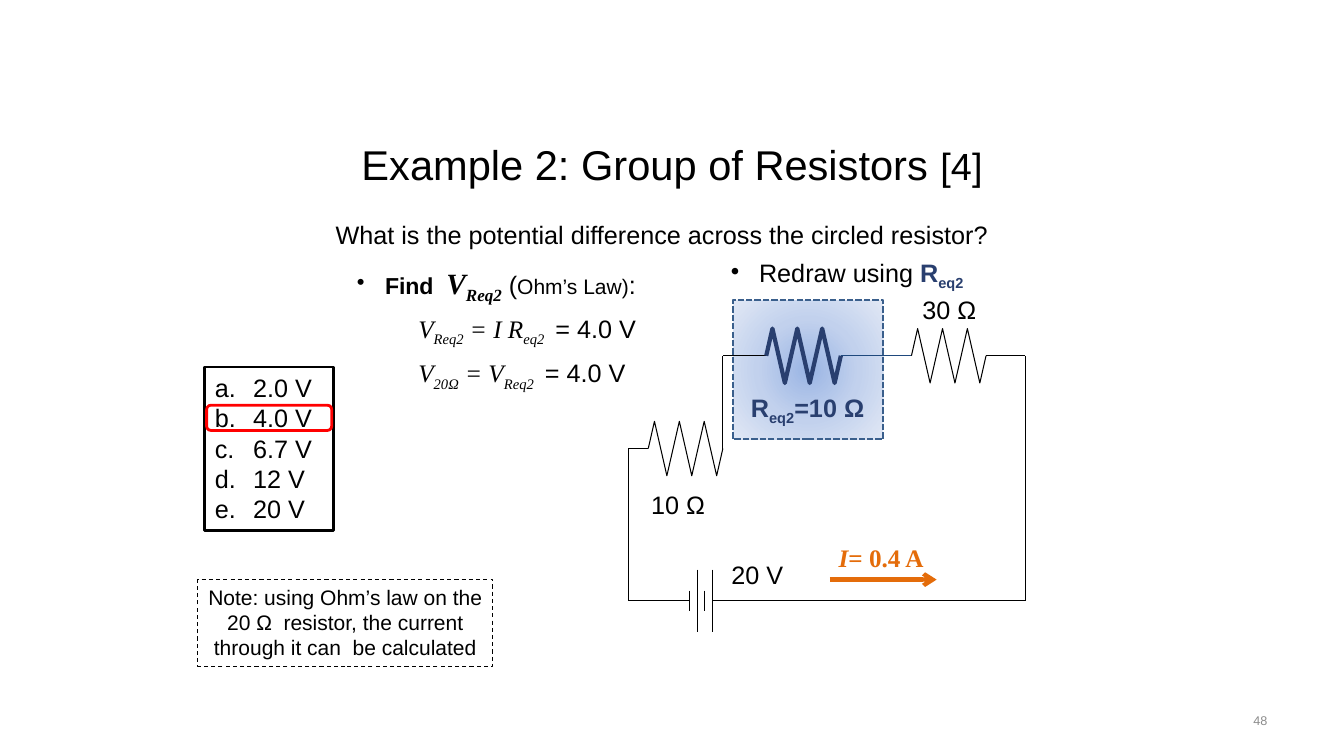
from lxml import etree
from pptx import Presentation
from pptx.dml.color import RGBColor
from pptx.enum.dml import MSO_LINE
from pptx.enum.shapes import MSO_CONNECTOR, MSO_SHAPE
from pptx.enum.text import MSO_ANCHOR, MSO_AUTO_SIZE, PP_ALIGN
from pptx.oxml import parse_xml
from pptx.oxml.ns import nsdecls, qn
from pptx.util import Inches, Pt

LEFT, CENTER, RIGHT = PP_ALIGN.LEFT, PP_ALIGN.CENTER, PP_ALIGN.RIGHT
TOP, MIDDLE = MSO_ANCHOR.TOP, MSO_ANCHOR.MIDDLE
RECTANGLE, ROUNDED = MSO_SHAPE.RECTANGLE, MSO_SHAPE.ROUNDED_RECTANGLE
STRAIGHT = MSO_CONNECTOR.STRAIGHT
DASH, SQUARE_DOT = MSO_LINE.DASH, MSO_LINE.SQUARE_DOT
NO_AUTOFIT = MSO_AUTO_SIZE.NONE

BLACK = RGBColor(0x00, 0x00, 0x00)
WHITE = RGBColor(0xFF, 0xFF, 0xFF)
RED = RGBColor(0xFF, 0x00, 0x00)
ORANGE = RGBColor(0xE4, 0x6C, 0x0A)
NAVY = RGBColor(0x29, 0x3F, 0x6F)
BORDER_BLUE = RGBColor(0x3A, 0x5F, 0x8C)
WIRE_BLUE = RGBColor(0x1F, 0x49, 0x7D)
GRAY = RGBColor(0x8C, 0x8C, 0x8C)
GLOW = [(0, RGBColor(0x9A, 0xB5, 0xE4)), (50, RGBColor(0xC2, 0xD1, 0xED)),
        (100, RGBColor(0xE1, 0xE8, 0xF5))]
SANS, SERIF = "Arial", "Times New Roman"

# Content: a run is its text and the styles that differ from its paragraph
ITALIC, BOLD, SUB = {"italic": True}, {"bold": True}, {"sub": True}
UPRIGHT = {"name": SANS}
ITALIC_SUB = ITALIC | SUB
SYMBOL = {"name": SERIF, "size": Pt(21)} | BOLD | ITALIC
NAVY_BOLD = {"color": NAVY} | BOLD

TITLE = [("Example 2: Group of Resistors ", {}), ("[4]", {"size": Pt(27)})]
ANSWERS = ["2.0 V", "4.0 V", "6.7 V", "12 V", "20 V"]
QUESTION = [("What is the potential difference across the circled resistor?", {})]
FIND = [("Find  ", BOLD | {"size": Pt(16.5)}), ("V", SYMBOL), ("Req2", SYMBOL | SUB),
        (" (", {}), ("Ohm’s Law)", {"size": Pt(15)}), (":", {})]
EQUATIONS = [
    [("V", ITALIC), ("Req2", ITALIC_SUB), (" = I R", ITALIC),
     ("eq2   ", ITALIC_SUB), ("= 4.0 V", UPRIGHT)],
    [("V", ITALIC), ("20Ω", ITALIC_SUB), (" = V", ITALIC),
     ("Req2   ", ITALIC_SUB), ("= 4.0 V", UPRIGHT)],
]
REDRAW = [("Redraw using ", {}), ("R", NAVY_BOLD), ("eq2", NAVY_BOLD | SUB)]
EQUIVALENT = [("R", BOLD), ("eq2", BOLD | SUB), ("=10 Ω", BOLD)]
CURRENT = [("I", BOLD | ITALIC), ("= 0.4 A", BOLD)]
NOTE = [("Note: using Ohm’s law on the 20 Ω  resistor, the current through it "
         "can  be calculated", {})]
PART_LABELS = [("30 Ω ", 8.98, 2.87), ("10 Ω ", 6.29, 4.81), ("20 V", 7.04, 5.5)]

# Circuit grid: columns and rows that the wires follow
X_LEFT, X_INNER, X_RIGHT = 6.23, 7.17, 10.17
Y_TOP, Y_MIDDLE, Y_BOTTOM = 3.53, 4.45, 5.96
ZIGZAG_WIDTH, ZIGZAG_RISE, ZIGZAG_TURNS = 0.74, 0.27, 6
X_TEN, X_EQUIVALENT, X_THIRTY = 6.43, 7.6, 9.04
RESISTORS = [(X_TEN, Y_MIDDLE, BLACK, 0.75), (X_EQUIVALENT, Y_TOP, NAVY, 3),
             (X_THIRTY, Y_TOP, BLACK, 0.75)]
PLATES = [(6.84, 0.1), (6.92, 0.31), (6.99, 0.1), (7.07, 0.31)]
WIRES = [
    (X_LEFT, Y_BOTTOM, PLATES[0][0], Y_BOTTOM, BLACK),
    (X_LEFT, Y_MIDDLE, X_LEFT, Y_BOTTOM, BLACK),
    (X_LEFT, Y_MIDDLE, X_TEN, Y_MIDDLE, BLACK),
    (X_INNER, Y_MIDDLE, X_INNER, Y_TOP, BLACK),
    (X_INNER, Y_TOP, X_EQUIVALENT, Y_TOP, BLACK),
    (X_EQUIVALENT + ZIGZAG_WIDTH, Y_TOP, X_THIRTY, Y_TOP, WIRE_BLUE),
    (X_THIRTY + ZIGZAG_WIDTH, Y_TOP, X_RIGHT, Y_TOP, BLACK),
    (X_RIGHT, Y_TOP, X_RIGHT, Y_BOTTOM, BLACK),
    (PLATES[-1][0], Y_BOTTOM, X_RIGHT, Y_BOTTOM, BLACK),
]
WIRES += [(x, Y_BOTTOM - half, x, Y_BOTTOM + half, BLACK) for x, half in PLATES]

presentation = Presentation()
presentation.slide_width, presentation.slide_height = Inches(13.33), Inches(7.5)
slide = presentation.slides.add_slide(presentation.slide_layouts[1])
shapes = slide.shapes


def place(shape, left, top, width, height):
    shape.left, shape.top = Inches(left), Inches(top)
    shape.width, shape.height = Inches(width), Inches(height)


def outline(shape, color, width, dash=None):
    shape.line.color.rgb = color
    shape.line.width = Pt(width)
    if dash is not None:
        shape.line.dash_style = dash


def style_font(font, color=None, **settings):
    if color is not None:
        font.color.rgb = color
    for name, value in settings.items():
        setattr(font, name, value)


def write(paragraph, runs, size=18, color=BLACK, align=LEFT, font=SANS):
    paragraph.alignment = align
    style_font(paragraph.font, color, name=font, size=Pt(size))
    for text, style in runs:
        run = paragraph.add_run()
        run.text = text
        settings = dict(style)
        if settings.pop("sub", False):
            run._r.get_or_add_rPr().set("baseline", "-25000")
        style_font(run.font, **settings)


def set_bullet(paragraph, indent, tag, **attributes):
    properties = paragraph._p.get_or_add_pPr()
    properties.set("marL", str(Inches(indent)))
    properties.set("indent", str(-Inches(indent)))
    bullet = etree.Element(qn(tag), attributes)
    properties.insert_element_before(bullet, "a:tabLst", "a:defRPr", "a:extLst")


def prepare_frame(shape, anchor=TOP):
    frame = shape.text_frame
    frame.word_wrap, frame.auto_size = True, NO_AUTOFIT
    frame.vertical_anchor = anchor
    return frame.paragraphs[0]


def add_text(runs, left, top, width, height=0.4, anchor=TOP, **style):
    box = shapes.add_textbox(Inches(left), Inches(top), Inches(width), Inches(height))
    paragraph = prepare_frame(box, anchor)
    write(paragraph, runs, **style)
    return paragraph


def add_box(kind, left, top, width, height):
    box = shapes.add_shape(kind, Inches(left), Inches(top), Inches(width), Inches(height))
    box.shadow.inherit = False
    box.fill.background()
    return box


def add_wire(x1, y1, x2, y2, color, width=0.75):
    wire = shapes.add_connector(STRAIGHT, Inches(x1), Inches(y1), Inches(x2), Inches(y2))
    outline(wire, color, width)
    etree.SubElement(wire._element.spPr, qn("a:effectLst"))
    return wire


def add_resistor(left, middle, color, width):
    points = [(left + ZIGZAG_WIDTH * (2 * turn + 1) / (2 * ZIGZAG_TURNS),
               middle + ZIGZAG_RISE * (1 if turn % 2 else -1))
              for turn in range(ZIGZAG_TURNS)]
    points.append((left + ZIGZAG_WIDTH, middle))
    builder = shapes.build_freeform(Inches(left), Inches(middle))
    builder.add_line_segments([(Inches(x), Inches(y)) for x, y in points], close=False)
    resistor = builder.convert_to_shape()
    resistor.shadow.inherit = False
    resistor.fill.background()
    outline(resistor, color, width)


# Title and answer list
title, answers = slide.placeholders
place(title, 3.29, 1.16, 6.75, 0.94)
write(prepare_frame(title, MIDDLE), TITLE, size=29.7, align=CENTER)
place(answers, 2.03, 3.64, 1.28, 1.62)
answers.fill.solid()
answers.fill.fore_color.rgb = WHITE
outline(answers, BLACK, 2)
prepare_frame(answers)
for number, answer in enumerate(ANSWERS):
    frame = answers.text_frame
    paragraph = frame.add_paragraph() if number else frame.paragraphs[0]
    write(paragraph, [(answer, {})])
    paragraph.space_before, paragraph.line_spacing = Pt(0), Pt(21.7)
    set_bullet(paragraph, 0.38, "a:buAutoNum", type="alphaLcPeriod")
outline(add_box(ROUNDED, 2.05, 4.02, 1.24, 0.25), RED, 2)

# Highlight behind the equivalent resistor
highlight = add_box(RECTANGLE, 7.27, 2.98, 1.49, 1.38)
outline(highlight, BORDER_BLUE, 1.5, SQUARE_DOT)
stops = "".join(f'<a:gs pos="{share * 1000}"><a:srgbClr val="{color}"/></a:gs>'
                for share, color in GLOW)
gradient = parse_xml(
    f'<a:gradFill {nsdecls("a")} rotWithShape="1"><a:gsLst>{stops}</a:gsLst>'
    '<a:path path="circle"><a:fillToRect l="50000" t="50000" r="50000" b="50000"/>'
    '</a:path></a:gradFill>')
properties = highlight._element.spPr
properties.replace(properties.find(qn("a:noFill")), gradient)

# Circuit
for wire in WIRES:
    add_wire(*wire)
for resistor in RESISTORS:
    add_resistor(*resistor)
for label, left, top in PART_LABELS:
    add_text([(label, {})], left, top, 0.94, align=CENTER)
add_text(EQUIVALENT, 7.23, 3.84, 1.56, color=NAVY, align=CENTER)
arrow = add_wire(8.23, 5.75, 9.29, 5.75, ORANGE, 3)
etree.SubElement(arrow.line._get_or_add_ln(), qn("a:tailEnd"), type="arrow")
add_text(CURRENT, 8.19, 5.33, 1.1, color=ORANGE, align=CENTER, font=SERIF)

# Question, working and note
add_text(QUESTION, 3.23, 2.13, 6.75)
for bulleted in (add_text(FIND, 3.44, 2.58, 3.48, 0.45), add_text(REDRAW, 7.15, 2.5, 2.65)):
    set_bullet(bulleted, 0.28, "a:buChar", char="•")
for row, equation in enumerate(EQUATIONS):
    add_text(equation, 4.05, 3.06 + 0.44 * row, 2.68, font=SERIF)
note = add_box(RECTANGLE, 1.96, 5.75, 2.93, 0.86)
outline(note, BLACK, 0.75, DASH)
write(prepare_frame(note), NOTE, size=15, align=CENTER)
add_text([("48", {})], 9.56, 6.95, 3.11, anchor=MIDDLE, size=9, color=GRAY, align=RIGHT)

presentation.save("out.pptx")
